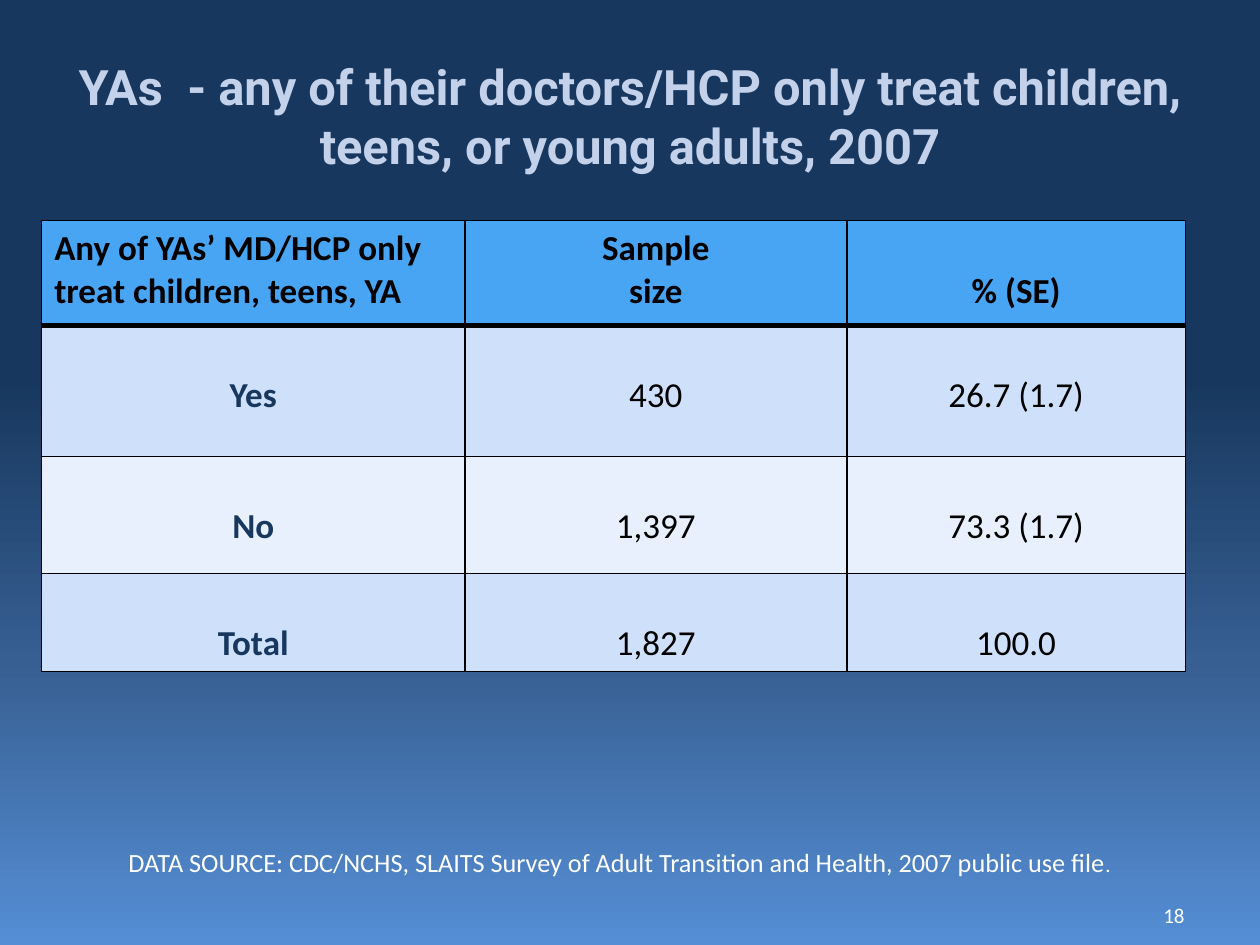
"""Build a slide with a survey table on a blue gradient background."""
from lxml.etree import SubElement
from pptx import Presentation
from pptx.dml.color import RGBColor
from pptx.enum.text import MSO_ANCHOR as ANCHOR, PP_ALIGN as ALIGN
from pptx.oxml.ns import qn
from pptx.util import Cm, Pt

COLORS = {
    "navy": "17375E", "mid": "375F92", "sky": "558ED5", "title": "C4D1EB",
    "header": "47A5F3", "band": "CFE1FA", "pale": "E9F0FD",
    "black": "000000", "white": "FFFFFF",
}
STOPS = [(0, "navy"), (40, "navy"), (70, "mid"), (100, "sky")]
COL_WIDTHS = [8.53, 7.7, 6.83]
ROW_HEIGHTS = [2.11, 2.64, 2.36, 1.98]
ROWS = [
    ["Any of YAs’ MD/HCP only treat children, teens, YA", "Sample\nsize", "% (SE)"],
    ["Yes", "430", "26.7 (1.7)"],
    ["No", "1,397", "73.3 (1.7)"],
    ["Total", "1,827", "100.0"],
]


def rgb(name):
    return RGBColor.from_string(COLORS[name])


def add_run(p, text, size=20, font="Calibri", color="black", bold=False):
    r = p.add_run()
    r.text = text
    r.font.size, r.font.name, r.font.bold = Pt(size), font, bold
    r.font.color.rgb = rgb(color)


def write(tf, text, align=ALIGN.LEFT, **fmt):
    for i, line in enumerate(text.split("\n")):
        p = tf.add_paragraph() if i else tf.paragraphs[0]
        p.alignment = align
        add_run(p, line, **fmt)


def add_text(s, box, text, anchor=ANCHOR.TOP, **fmt):
    tf = s.shapes.add_textbox(*map(Cm, box)).text_frame
    tf.word_wrap, tf.vertical_anchor = True, anchor
    write(tf, text, **fmt)
    return tf


def add_solid(parent, color):
    SubElement(SubElement(parent, qn("a:solidFill")), qn("a:srgbClr"), val=COLORS[color])


def set_background(s):
    fill = s.background.fill
    fill.gradient()
    fill.gradient_angle = 270
    stops = s.background._cSld.find(".//" + qn("a:gsLst"))
    stops[:] = []
    for pos, color in STOPS:
        gs = SubElement(stops, qn("a:gs"), pos=str(pos * 1000))
        SubElement(gs, qn("a:srgbClr"), val=COLORS[color])


def set_borders(cell, **widths):
    tc_pr = cell._tc.get_or_add_tcPr()
    for side in "LRTB":
        ln = SubElement(tc_pr, qn(f"a:ln{side}"), w=str(Pt(widths.get(side, 1))))
        add_solid(ln, "black")


def format_cell(cell, row, col, text):
    header = row == 0
    set_borders(cell, B=3 if header else 1, T=3 if row == 1 else 1)
    cell.fill.solid()
    cell.fill.fore_color.rgb = rgb("header" if header else "band" if row % 2 else "pale")
    if not header or col == 2:
        cell.margin_top = Cm(0.99)
    write(cell.text_frame, text,
          align=ALIGN.LEFT if header and col == 0 else ALIGN.CENTER,
          bold=header or col == 0,
          color="navy" if col == 0 and not header else "black")


def add_survey_table(s):
    table = s.shapes.add_table(
        len(ROWS), len(COL_WIDTHS), Cm(0.84), Cm(4.45),
        Cm(sum(COL_WIDTHS)), Cm(sum(ROW_HEIGHTS))).table
    for column, width in zip(table.columns, COL_WIDTHS):
        column.width = Cm(width)
    for i, (height, texts) in enumerate(zip(ROW_HEIGHTS, ROWS)):
        table.rows[i].height = Cm(height)
        for j, text in enumerate(texts):
            format_cell(table.cell(i, j), i, j, text)


def main():
    prs = Presentation()
    prs.slide_width, prs.slide_height = Cm(25.4), Cm(19.05)
    s = prs.slides.add_slide(prs.slide_layouts[6])
    set_background(s)
    add_text(s, (1.27, 0.74, 22.86, 3.18),
             "YAs  - any of their doctors/HCP only treat children, teens, or young adults, 2007",
             anchor=ANCHOR.MIDDLE, align=ALIGN.CENTER,
             size=27.9, font="Roboto", color="title", bold=True)
    add_survey_table(s)
    add_text(s, (18.21, 18.21, 5.92, 0.46), "18", anchor=ANCHOR.MIDDLE,
             align=ALIGN.RIGHT, size=12, color="white")
    tf = add_text(
        s, (2.34, 16.94, 21.79, 0.89),
        "DATA SOURCE: CDC/NCHS, SLAITS Survey of Adult Transition and Health, 2007 public use file",
        size=15, color="white")
    add_run(tf.paragraphs[0], ".", size=12, color="white")
    prs.save("out.pptx")


if __name__ == "__main__":
    main()
